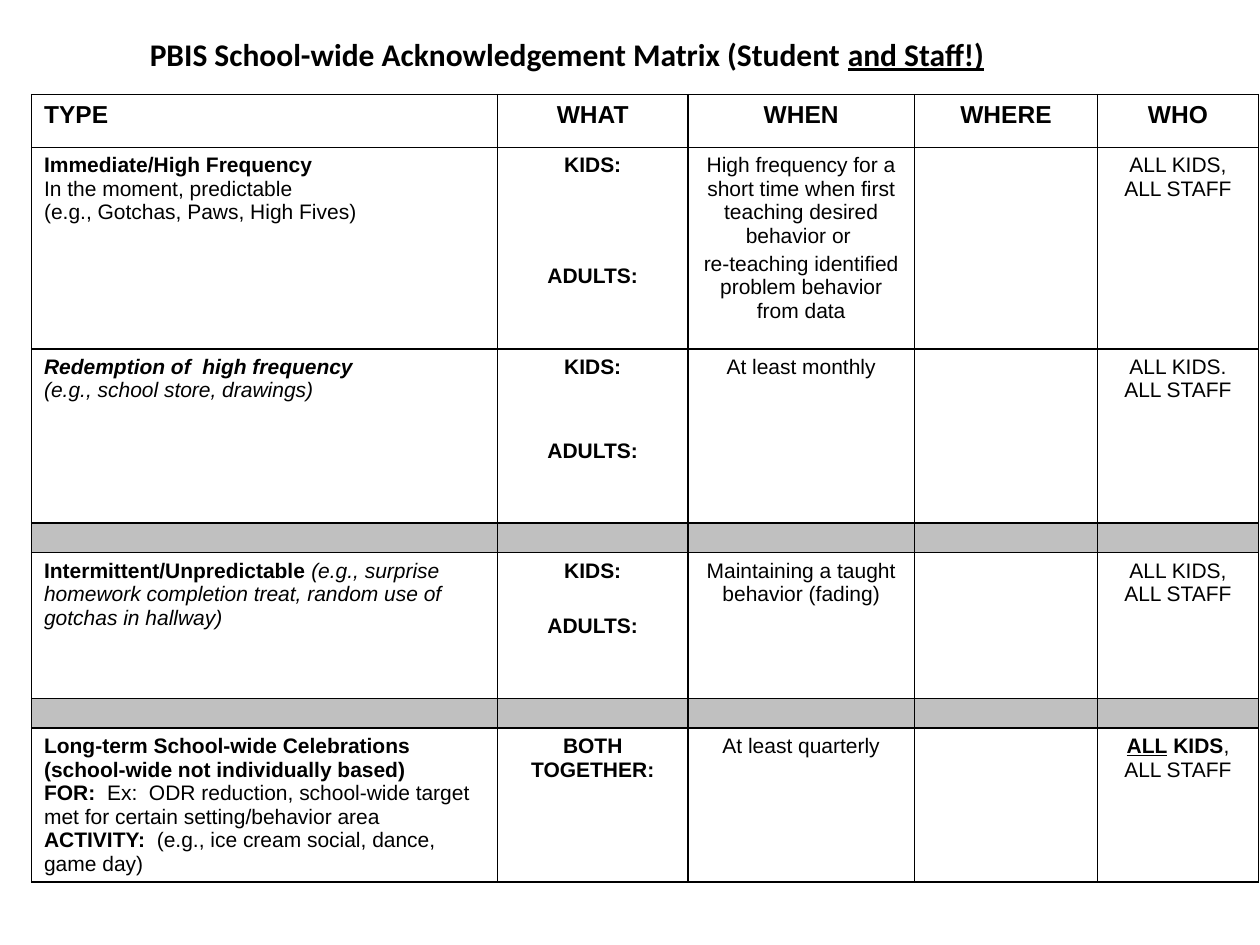
"""Build the school-wide acknowledgement matrix slide."""
from dataclasses import dataclass, field

from lxml import etree
from pptx import Presentation
from pptx import util as u
from pptx.dml.color import RGBColor
from pptx.enum import text
from pptx.oxml import ns

BLACK = RGBColor(0x00, 0x00, 0x00)
GREY = RGBColor(0xC0, 0xC0, 0xC0)
COL_WIDTHS = (266.4, 108.7, 129.6, 104.4, 92.2)
SPACING = 2.4
BODY = dict(name="Arial", size=u.Pt(12))
HEADER = dict(name="Arial", size=u.Pt(14), bold=True)
TITLE = dict(name="Calibri", size=u.Pt(18), bold=True)
BOLD = dict(bold=True)
ITALIC = dict(italic=True)


@dataclass(frozen=True)
class Run:
    text: str
    fmt: dict = field(default_factory=dict)


@dataclass(frozen=True)
class Para:
    runs: tuple[Run, ...]
    before: float = 0


@dataclass(frozen=True)
class Row:
    height: float
    cells: tuple[tuple[Para, ...], ...] = ((),) * len(COL_WIDTHS)
    base: dict = field(default_factory=lambda: BODY)
    band: bool = False


def para(words: str, before: float = 0, **fmt) -> Para:
    """Return a paragraph of one run."""
    return Para((Run(words, fmt),), before)


def kids_adults(gap: float) -> tuple[Para, ...]:
    """Return the two group labels set apart by a gap."""
    return para("KIDS:", **BOLD), para("ADULTS:", gap, **BOLD)


def header(*names: str) -> tuple[tuple[Para, ...], ...]:
    """Return one heading cell per name."""
    return tuple((para(name),) for name in names)


ROWS = (
    Row(30.24, header("TYPE", "WHAT", "WHEN", "WHERE", "WHO"), HEADER),
    Row(115.2, (
        (para("Immediate/High Frequency", **BOLD),
         para("In the moment, predictable"),
         para("(e.g., Gotchas, Paws, High Fives)")),
        kids_adults(50),
        (para("High frequency for a short time when first teaching desired behavior or "),
         para("re-teaching identified problem behavior from data", SPACING)),
        (),
        (para("ALL KIDS, ALL STAFF"),))),
    Row(99.36, (
        (para("Redemption of  high frequency", bold=True, italic=True),
         para("(e.g., school store, drawings)", **ITALIC)),
        kids_adults(34.4),
        (para("At least monthly"),),
        (),
        (para("ALL KIDS. ALL STAFF"),))),
    Row(16.4, band=True),
    Row(83.2, (
        (Para((Run("Intermittent/Unpredictable ", BOLD),
               Run("(e.g., surprise homework completion treat, "
                   "random use of gotchas in hallway)", ITALIC))),),
        kids_adults(18.4),
        (para("Maintaining a taught behavior (fading)"),),
        (),
        (para("ALL KIDS, ALL STAFF"),))),
    Row(16.4, band=True),
    Row(88, (
        (para("Long-term School-wide Celebrations (school-wide not individually based)",
              **BOLD),
         Para((Run("FOR:", BOLD),
               Run("  Ex:  ODR reduction, school-wide target met for "
                   "certain setting/behavior area"))),
         Para((Run("ACTIVITY:", BOLD),
               Run("  (e.g., ice cream social, dance, game day)")))),
        (para("BOTH TOGETHER:", **BOLD),),
        (para("At least quarterly"),),
        (),
        (Para((Run("ALL", dict(bold=True, underline=True)),
               Run(" KIDS", BOLD), Run(", ALL STAFF"))),))),
)


def write(tf, paras: tuple[Para, ...], base: dict, align) -> None:
    """Fill a text frame with formatted paragraphs."""
    for i, item in enumerate(paras):
        p = tf.add_paragraph() if i else tf.paragraphs[0]
        p.alignment = align
        p.space_before = u.Pt(item.before)
        for run in item.runs:
            r = p.add_run()
            r.text = run.text
            r.font.color.rgb = BLACK
            for key, value in {"bold": False, **base, **run.fmt}.items():
                setattr(r.font, key, value)


def add_borders(cell) -> None:
    """Give a cell a thin black line on every side."""
    tc_pr = cell._tc.get_or_add_tcPr()
    for side in ("lnL", "lnR", "lnT", "lnB"):
        ln = etree.SubElement(tc_pr, ns.qn(f"a:{side}"), w=str(u.Pt(1)))
        fill = etree.SubElement(ln, ns.qn("a:solidFill"))
        etree.SubElement(fill, ns.qn("a:srgbClr"), val=str(BLACK))


def draw_cell(cell, paras: tuple[Para, ...], row: Row, align) -> None:
    """Draw the borders, fill and text of one cell."""
    add_borders(cell)
    if row.band:
        cell.fill.solid()
        cell.fill.fore_color.rgb = GREY
    else:
        cell.fill.background()
    write(cell.text_frame, paras, row.base, align)
    if not paras:
        p = cell.text_frame.paragraphs[0]
        etree.SubElement(p._p, ns.qn("a:endParaRPr"), sz="800")


def draw_table(s, rows: tuple[Row, ...]) -> None:
    """Draw the matrix."""
    sp = s.shapes.add_table(len(rows), len(COL_WIDTHS), u.Pt(18), u.Pt(54),
                            u.Pt(sum(COL_WIDTHS)), u.Pt(sum(r.height for r in rows)))
    table = sp.table
    table.first_row = table.horz_banding = False
    for column, width in zip(table.columns, COL_WIDTHS):
        column.width = u.Pt(width)
    for i, row in enumerate(rows):
        table.rows[i].height = u.Pt(row.height)
        for j, paras in enumerate(row.cells):
            align = text.PP_ALIGN.CENTER if j else text.PP_ALIGN.LEFT
            draw_cell(table.cell(i, j), paras, row, align)


def draw_title(s) -> None:
    """Draw the slide heading."""
    sp = s.shapes.add_textbox(u.Pt(0), u.Pt(21.6), u.Pt(648), u.Pt(18))
    tf = sp.text_frame
    frame = dict(word_wrap=True, auto_size=text.MSO_AUTO_SIZE.NONE,
                 vertical_anchor=text.MSO_ANCHOR.MIDDLE)
    for key, value in frame.items():
        setattr(tf, key, value)
    heading = Para((Run("PBIS School-wide Acknowledgement Matrix (Student "),
                    Run("and Staff!)", dict(underline=True))))
    write(tf, (heading,), TITLE, text.PP_ALIGN.CENTER)


def main() -> None:
    """Create and save the presentation."""
    prs = Presentation()
    prs.slide_width, prs.slide_height = u.Pt(720), u.Pt(540)
    s = prs.slides.add_slide(prs.slide_layouts[6])
    draw_table(s, ROWS)
    draw_title(s)
    prs.save("out.pptx")


if __name__ == "__main__":
    main()
